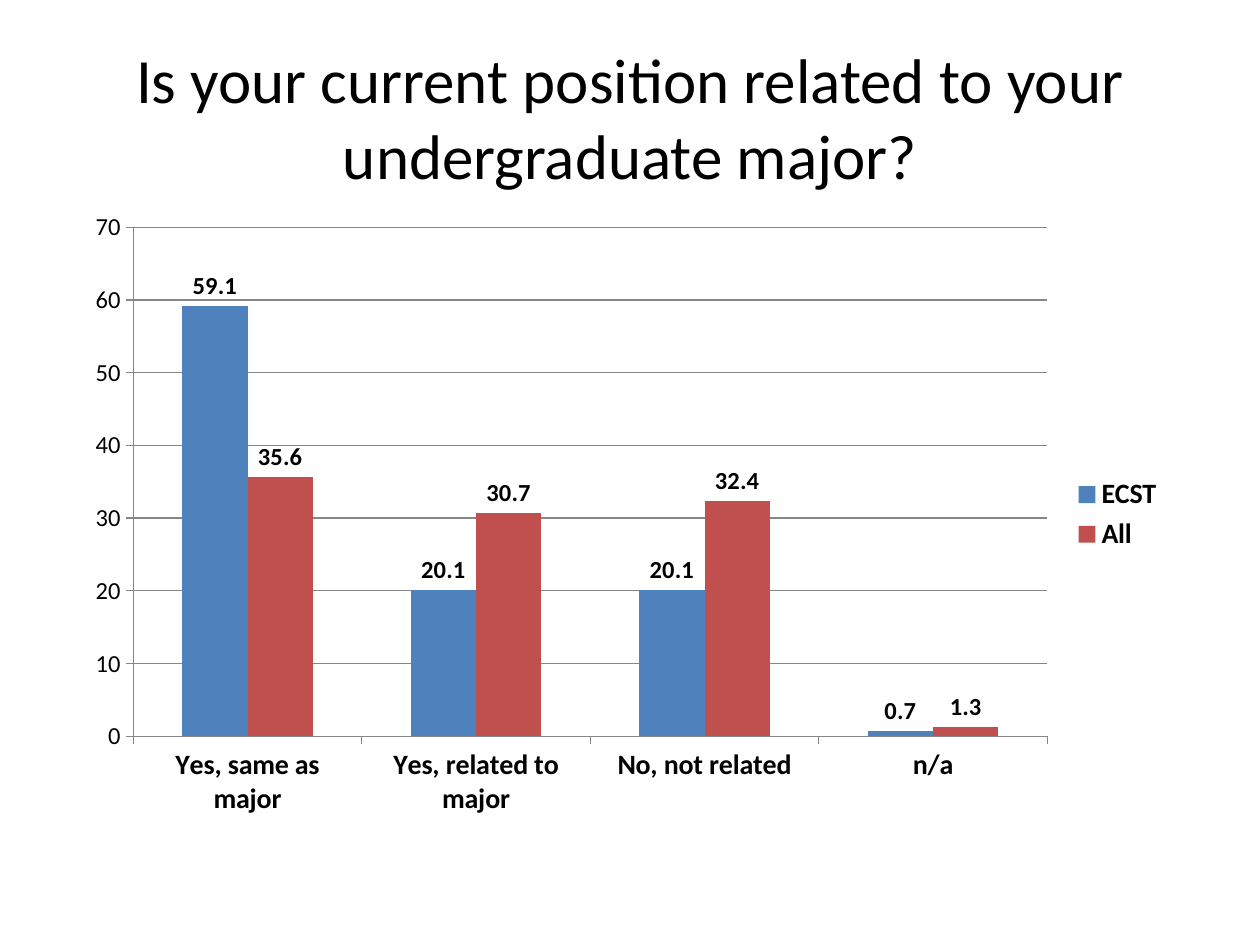
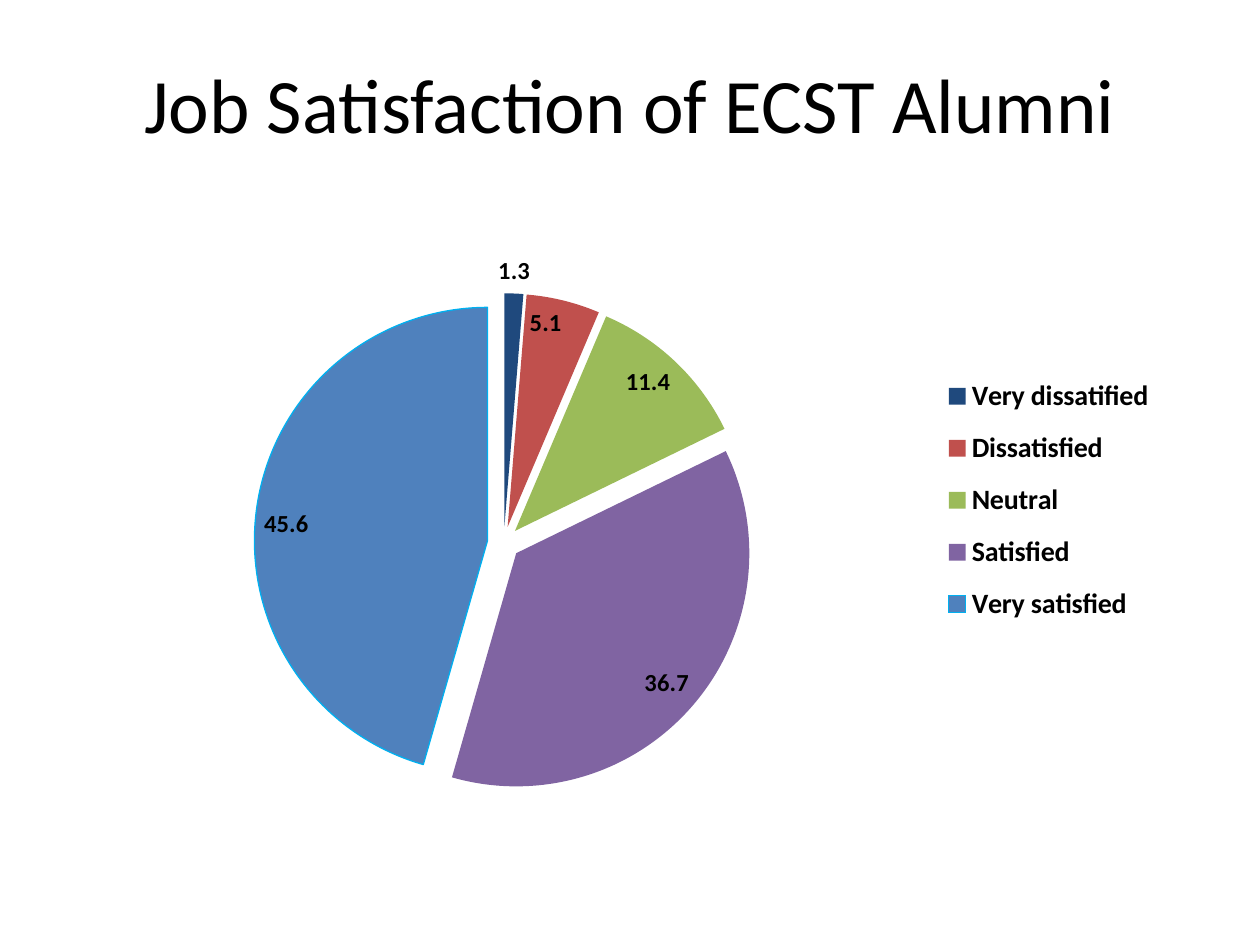
from dataclasses import dataclass
from typing import Any

from lxml import etree
from pptx import Presentation
from pptx.chart.chart import Chart
from pptx.chart.data import CategoryChartData
from pptx.dml.color import RGBColor
from pptx.enum.chart import XL_CHART_TYPE, XL_LABEL_POSITION, XL_LEGEND_POSITION, XL_TICK_MARK
from pptx.enum.text import MSO_ANCHOR, PP_ALIGN
from pptx.oxml.ns import qn
from pptx.slide import Slide
from pptx.util import Pt


@dataclass(frozen=True)
class Theme:
    font: str = "Calibri"
    text: RGBColor = RGBColor(0, 0, 0)
    grid: RGBColor = RGBColor.from_string("868686")
    navy: RGBColor = RGBColor.from_string("1F497D")
    blue: RGBColor = RGBColor.from_string("4F81BD")
    red: RGBColor = RGBColor.from_string("C0504D")
    green: RGBColor = RGBColor.from_string("9BBB59")
    purple: RGBColor = RGBColor.from_string("8064A2")
    highlight: RGBColor = RGBColor.from_string("00B0F0")
    base: Pt = Pt(10)
    label: Pt = Pt(14)
    category: Pt = Pt(16)


@dataclass(frozen=True)
class Box:
    left: float
    top: float
    width: float
    height: float

    def points(self) -> tuple[Pt, Pt, Pt, Pt]:
        return Pt(self.left), Pt(self.top), Pt(self.width), Pt(self.height)


@dataclass(frozen=True)
class Title:
    text: str
    size: float
    height: float


@dataclass(frozen=True)
class Survey:
    title: Title
    area: Box
    kind: XL_CHART_TYPE
    answers: tuple[str, ...]
    groups: dict[str, tuple[float, ...]]


THEME = Theme()
LABEL_FONT = {"size": THEME.label, "bold": True}
CATEGORY_FONT = {"size": THEME.category, "bold": True}
BASE_FONT = {"name": THEME.font, "size": THEME.base}

MAJOR = Survey(
    Title("Is your current position related to your undergraduate major?", 36, 90),
    Box(42, 114, 630, 360),
    XL_CHART_TYPE.COLUMN_CLUSTERED,
    ("Yes, same as major", "Yes, related to major", "No, not related", "n/a"),
    {"ECST": (59.1, 20.1, 20.1, 0.7), "All": (35.6, 30.7, 32.4, 1.3)},
)
SATISFACTION = Survey(
    Title("Job Satisfaction of ECST Alumni", 44, 74),
    Box(90, 132, 582, 324),
    XL_CHART_TYPE.PIE,
    ("Very dissatified", "Dissatisfied", "Neutral", "Satisfied", "Very satisfied"),
    {"Series 1": (1.3, 5.1, 11.4, 36.7, 45.6)},
)


def apply_format(target: Any, values: dict[str, Any]) -> None:
    for attribute, value in values.items():
        setattr(target, attribute, value)


def style_font(font: Any, values: dict[str, Any]) -> None:
    apply_format(font, {"name": THEME.font, **values})
    font.color.rgb = THEME.text


def fill_with(part: Any, color: RGBColor) -> None:
    part.format.fill.solid()
    part.format.fill.fore_color.rgb = color


def draw_line(part: Any, color: RGBColor) -> None:
    part.format.line.color.rgb = color
    part.format.line.width = Pt(0.75)


def set_layout(parent: Any, index: int, values: dict[str, Any]) -> None:
    for existing in parent.findall(qn("c:layout")):
        parent.remove(existing)
    layout = etree.Element(qn("c:layout"))
    manual = etree.SubElement(layout, qn("c:manualLayout"))
    for tag, value in values.items():
        etree.SubElement(manual, qn(f"c:{tag}")).set("val", str(value))
    parent.insert(index, layout)


def add_title(slide: Slide, title: Title) -> None:
    frame = slide.shapes.add_textbox(*Box(36, 21.6, 648, title.height).points()).text_frame
    apply_format(frame, {"word_wrap": True, "vertical_anchor": MSO_ANCHOR.MIDDLE})
    heading = frame.paragraphs[0]
    apply_format(heading, {"text": title.text, "alignment": PP_ALIGN.CENTER})
    style_font(heading.runs[0].font, {"size": Pt(title.size)})


def add_survey(slide: Slide, survey: Survey) -> Chart:
    add_title(slide, survey.title)
    data = CategoryChartData()
    data.categories = survey.answers
    for group, shares in survey.groups.items():
        data.add_series(group, shares)
    chart = slide.shapes.add_chart(survey.kind, *survey.area.points(), data).chart
    apply_format(chart, {"has_title": False, "has_legend": True})
    style_font(chart.font, BASE_FONT)
    apply_format(chart.legend, {"position": XL_LEGEND_POSITION.RIGHT, "include_in_layout": False})
    style_font(chart.legend.font, CATEGORY_FONT)
    for series in chart.plots[0].series:
        series.data_labels.show_value = True
        style_font(series.data_labels.font, LABEL_FONT)
    return chart


def build_major(slide: Slide) -> None:
    chart = add_survey(slide, MAJOR)
    plot = chart.plots[0]
    apply_format(plot, {"gap_width": 150, "overlap": 0, "vary_by_categories": False})
    for series, color in zip(plot.series, (THEME.blue, THEME.red)):
        fill_with(series, color)
        series.data_labels.position = XL_LABEL_POSITION.OUTSIDE_END
    axis_fonts = (
        (chart.category_axis, CATEGORY_FONT),
        (chart.value_axis, {"size": THEME.label, "bold": False}),
    )
    for axis, font in axis_fonts:
        axis.major_tick_mark = XL_TICK_MARK.OUTSIDE
        style_font(axis.tick_labels.font, font)
        draw_line(axis, THEME.grid)
    apply_format(
        chart.value_axis,
        {"minimum_scale": 0, "maximum_scale": 70, "major_unit": 10, "has_major_gridlines": True},
    )
    draw_line(chart.value_axis.major_gridlines, THEME.grid)


def build_satisfaction(slide: Slide) -> None:
    chart = add_survey(slide, SATISFACTION)
    plot = chart.plots[0]
    plot.vary_by_categories = True
    shares = plot.series[0]
    explosion = etree.Element(qn("c:explosion"), val="7")
    shares._element.find(qn("c:tx")).addnext(explosion)
    colors = (THEME.navy, THEME.red, THEME.green, THEME.purple, THEME.blue)
    for index, color in enumerate(colors):
        fill_with(shares.points[index], color)
    draw_line(shares.points[len(colors) - 1], THEME.highlight)
    shares.data_labels.position = XL_LABEL_POSITION.INSIDE_END
    smallest = shares.points[0].data_label
    style_font(smallest.font, LABEL_FONT)
    smallest.position = XL_LABEL_POSITION.OUTSIDE_END
    edges = {"xMode": "edge", "yMode": "edge"}
    set_layout(
        chart._chartSpace.chart.plotArea,
        0,
        {"layoutTarget": "inner", **edges, "x": 0, "y": 0.11, "w": 0.68, "h": 0.88},
    )
    set_layout(chart.legend._element, 1, {**edges, "x": 0.76, "y": 0.23, "w": 0.23, "h": 0.49})


def main() -> None:
    presentation = Presentation()
    apply_format(presentation, {"slide_width": Pt(720), "slide_height": Pt(540)})
    for build in (build_major, build_satisfaction):
        build(presentation.slides.add_slide(presentation.slide_layouts[6]))
    presentation.save("out.pptx")


if __name__ == "__main__":
    main()
